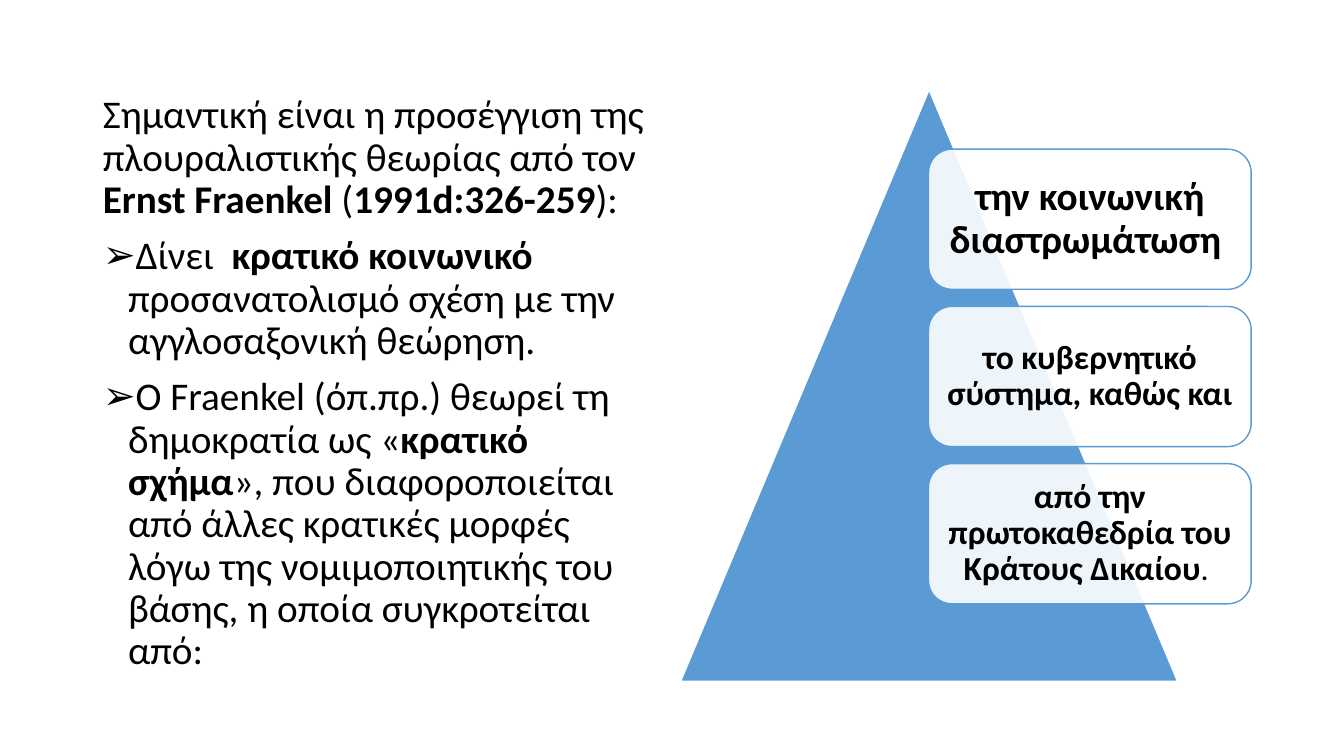
import pptx
import pptx.util
import pptx.dml.color
import pptx.enum.shapes
import pptx.enum.text
import pptx.oxml
import pptx.oxml.ns
from lxml import etree

Inches = pptx.util.Inches
Pt = pptx.util.Pt
SHAPE = pptx.enum.shapes.MSO_SHAPE
qn = pptx.oxml.ns.qn
BLUE = "5B9BD5"


def paint(target, color):
    target.rgb = pptx.dml.color.RGBColor.from_string(color)


def write(para, parts):
    para.line_spacing = 0.9
    for text, size, bold in parts:
        run = para.add_run()
        run.text = text
        run.font.name = "Calibri"
        run.font.size = Pt(size)
        run.font.bold = bold
        paint(run.font.color, "000000")


prs = pptx.Presentation()
prs.slide_width = Inches(13.33)
prs.slide_height = Inches(7.5)
slide = prs.slides.add_slide(prs.slide_layouts[1])
title = slide.shapes.title.element
title.getparent().remove(title)

body = slide.placeholders[1]
body.left, body.top = Inches(0.92), Inches(0.89)
body.width, body.height = Inches(5.67), Inches(5.87)
frame = body.text_frame
frame.word_wrap = True
frame.auto_size = pptx.enum.text.MSO_AUTO_SIZE.NONE
frame.vertical_anchor = pptx.enum.text.MSO_ANCHOR.TOP

points = [
    [("Σημαντική είναι η προσέγγιση της πλουραλιστικής θεωρίας από τον ", 28, False),
     ("Ernst Fraenkel ", 28, True), ("(", 28, False),
     ("1991d:326-259", 28, True), ("):", 28, False)],
    [("Δίνει  ", 28, False), ("κρατικό κοινωνικό ", 28, True),
     ("προσανατολισμό σχέση με την αγγλοσαξονική θεώρηση.", 28, False)],
    [("Ο Fraenkel (όπ.πρ.) θεωρεί τη δημοκρατία ως «", 28, False),
     ("κρατικό σχήμα", 28, True),
     ("», που διαφοροποιείται από άλλες κρατικές μορφές λόγω της "
      "νομιμοποιητικής του βάσης, η οποία συγκροτείται από:", 28, False)],
]
for i, parts in enumerate(points):
    para = frame.add_paragraph() if i else frame.paragraphs[0]
    write(para, parts)
    para.space_before = Pt(10)
    props = para._p.get_or_add_pPr()
    indent = Inches(0.25) if i else 0
    props.set("marL", str(indent))
    props.set("indent", str(-indent))
    if i:
        etree.SubElement(props, qn("a:buFont")).set("typeface", "Arial")
        etree.SubElement(props, qn("a:buChar")).set("char", "➢")
    else:
        etree.SubElement(props, qn("a:buNone"))

group = slide.shapes.add_group_shape()
peak = group.shapes.add_shape(
    SHAPE.ISOSCELES_TRIANGLE, Inches(6.75), Inches(0.89), Inches(4.93), Inches(5.87))
peak.shadow.inherit = False
peak.fill.solid()
paint(peak.fill.fore_color, BLUE)
paint(peak.line.color, "FFFFFF")
peak.line.width = Pt(1)

cards = [
    (0.12, [("την κοινωνική διαστρωμάτωση ", 28, True)]),
    (0.1, [("το κυβερνητικό σύστημα, καθώς και", 24, True)]),
    (0.1, [("από την πρωτοκαθεδρία του Κράτους Δικαίου", 24, True), (". ", 23, False)]),
]
for i, (inset, parts) in enumerate(cards):
    card = group.shapes.add_shape(
        SHAPE.ROUNDED_RECTANGLE, Inches(9.21), Inches(1.48 + 1.56 * i),
        Inches(3.2), Inches(1.39))
    card.shadow.inherit = False
    card.fill.solid()
    paint(card.fill.fore_color, "FFFFFF")
    tint = card.element.spPr.find(qn("a:solidFill")).find(qn("a:srgbClr"))
    etree.SubElement(tint, qn("a:alpha")).set("val", "90000")
    paint(card.line.color, BLUE)
    card.line.width = Pt(1)
    frame = card.text_frame
    frame.word_wrap = True
    frame.vertical_anchor = pptx.enum.text.MSO_ANCHOR.MIDDLE
    frame.margin_left = frame.margin_right = Inches(inset)
    frame.margin_top = frame.margin_bottom = Inches(inset)
    para = frame.paragraphs[0]
    para.alignment = pptx.enum.text.PP_ALIGN.CENTER
    write(para, parts)

prs.save("out.pptx")
